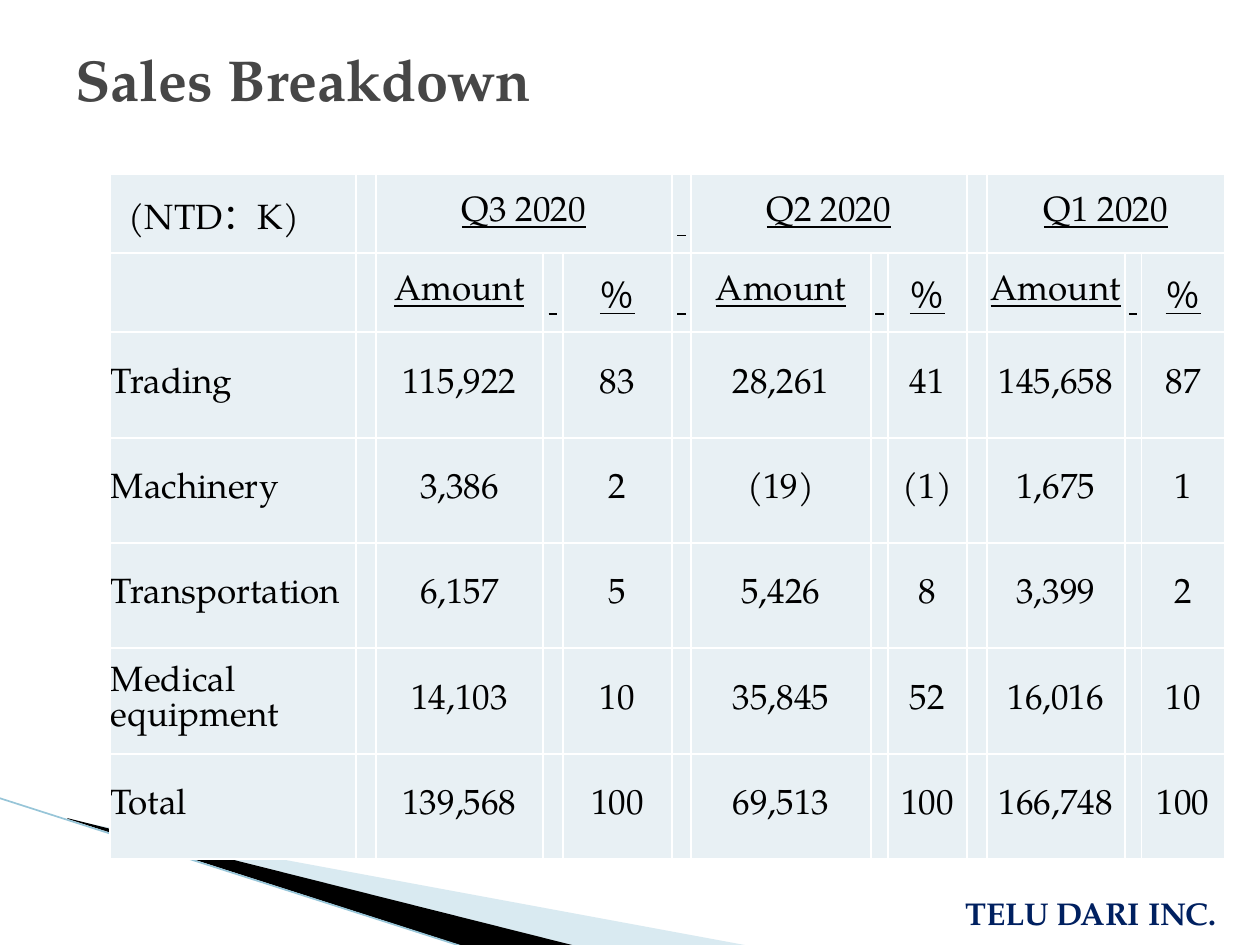
"""Build the sales breakdown slide."""
from lxml import etree
from pptx import Presentation, util as u
from pptx.dml.color import RGBColor
from pptx.enum import shapes, text
from pptx.oxml.ns import qn

PX = 914400 / 126
FONT = "TeX Gyre Pagella"
COLORS = {"cell": "E8F0F4", "edge": "FFFFFF", "ink": "000000", "title": "464646",
          "firm": "002060", "pale": "A0CBDC", "dark": "000000", "line": "97C5D8"}
COLS = (246, 20, 167, 20, 109, 19, 180, 17, 79, 20, 138, 17, 83)
ROWS = (79, 79, 106, 105, 105, 106, 105)
SPOTS = (2, 4, 6, 8, 10, 12)
UNIT = "(NTD：K)"
TERMS = ("Q3 2020", "Q2 2020", "Q1 2020")
HEADS = ("Amount", "％") * 3
SALES = (
    ("Trading", "115,922", "83", "28,261", "41", "145,658", "87"),
    ("Machinery", "3,386", "2", "(19)", "(1)", "1,675", "1"),
    ("Transportation", "6,157", "5", "5,426", "8", "3,399", "2"),
    ("Medical equipment", "14,103", "10", "35,845", "52", "16,016", "10"),
    ("Total", "139,568", "100", "69,513", "100", "166,748", "100"),
)
RULES = ((0, 5), (1, 3), (1, 5), (1, 7), (1, 11))
BANDS = (
    ("pale", 40, ((69, 820), (750, 946), (575, 946), (69, 819))),
    ("dark", 100, ((67, 818), (576, 946), (469, 948), (68, 819))),
)
LABELS = (
    ("TELU DARI INC.", (953, 888, 307, 50), 18, "firm"),
    ("Sales Breakdown", (63, 38, 1134, 158), 33, "title"),
)


def emu(px):
    return u.Emu(round(px * PX))


def rgb(key):
    return RGBColor.from_string(COLORS[key])


def style(font, size, key, bold=False, under=False):
    font.name, font.size, font.bold = FONT, u.Pt(size), bold
    font.underline = under
    font.color.rgb = rgb(key)


def add_band(slide, key, alpha, points):
    build = slide.shapes.build_freeform(*points[0], scale=PX)
    build.add_line_segments(points[1:])
    band = build.convert_to_shape()
    band.shadow.inherit = False
    band.line.fill.background()
    band.fill.solid()
    band.fill.fore_color.rgb = rgb(key)
    if alpha < 100:
        tint = next(band.element.spPr.iter(qn("a:srgbClr")))
        etree.SubElement(tint, qn("a:alpha")).set("val", str(alpha * 1000))


def add_edge(slide):
    line = slide.shapes.add_connector(
        shapes.MSO_CONNECTOR.STRAIGHT, emu(-1), emu(798), emu(467), emu(948))
    line.line.color.rgb = rgb("line")
    line.line.width = u.Pt(0.95)
    etree.SubElement(line.element.spPr, qn("a:effectLst"))


def frame(cell):
    props = cell._tc.get_or_add_tcPr()
    for pos, side in enumerate(("lnL", "lnR", "lnT", "lnB")):
        line = etree.Element(qn("a:" + side), w="12700")
        fill = etree.SubElement(line, qn("a:solidFill"))
        etree.SubElement(fill, qn("a:srgbClr"), val=COLORS["edge"])
        props.insert(pos, line)


def fill_cells():
    cells = {(0, 0): UNIT}
    cells.update({(0, col): term for col, term in zip(SPOTS[::2], TERMS)})
    cells.update({(1, col): head for col, head in zip(SPOTS, HEADS)})
    for row, vals in enumerate(SALES, 2):
        cells.update({(row, col): val for col, val in zip((0,) + SPOTS, vals)})
    cells.update({spot: " " for spot in RULES})
    return cells


def add_sales(slide):
    table = slide.shapes.add_table(
        len(ROWS), len(COLS), emu(110), emu(174), emu(sum(COLS)), emu(sum(ROWS))).table
    table.first_row = table.horz_banding = False
    for col, width in zip(table.columns, COLS):
        col.width = emu(width)
    for row, height in zip(table.rows, ROWS):
        row.height = emu(height)
    cells = fill_cells()
    for row in range(len(ROWS)):
        for col in range(len(COLS)):
            cell = table.cell(row, col)
            cell.margin_left = cell.margin_right = cell.margin_top = emu(1)
            cell.margin_bottom = 0
            cell.vertical_anchor = text.MSO_ANCHOR.MIDDLE
            cell.fill.solid()
            cell.fill.fore_color.rgb = rgb("cell")
            frame(cell)
            cell.text_frame.text = cells.get((row, col), "")
            para = cell.text_frame.paragraphs[0]
            if col:
                para.alignment = text.PP_ALIGN.CENTER
            elif row > 1:
                para.alignment = text.PP_ALIGN.JUSTIFY
            style(para.font, 20, "ink")
            for run in para.runs:
                style(run.font, 20, "ink", under=row < 2 and col > 0)
    table.cell(0, 0).margin_left = emu(19)
    for row, col in RULES:
        cell = table.cell(row, col)
        cell.vertical_anchor = text.MSO_ANCHOR.BOTTOM
        cell.margin_bottom = emu(13)
    for col in SPOTS[::2]:
        table.cell(0, col).merge(table.cell(0, col + 2))


def add_label(slide, words, box, size, key):
    body = slide.shapes.add_textbox(*map(emu, box)).text_frame
    body.word_wrap = True
    body.text = words
    style(body.paragraphs[0].runs[0].font, size, key, bold=True)


def main():
    deck = Presentation()
    deck.slide_width, deck.slide_height = emu(1260), emu(945)
    slide = deck.slides.add_slide(deck.slide_layouts[6])
    for band in BANDS:
        add_band(slide, *band)
    add_edge(slide)
    add_sales(slide)
    for label in LABELS:
        add_label(slide, *label)
    deck.save("out.pptx")


if __name__ == "__main__":
    main()
